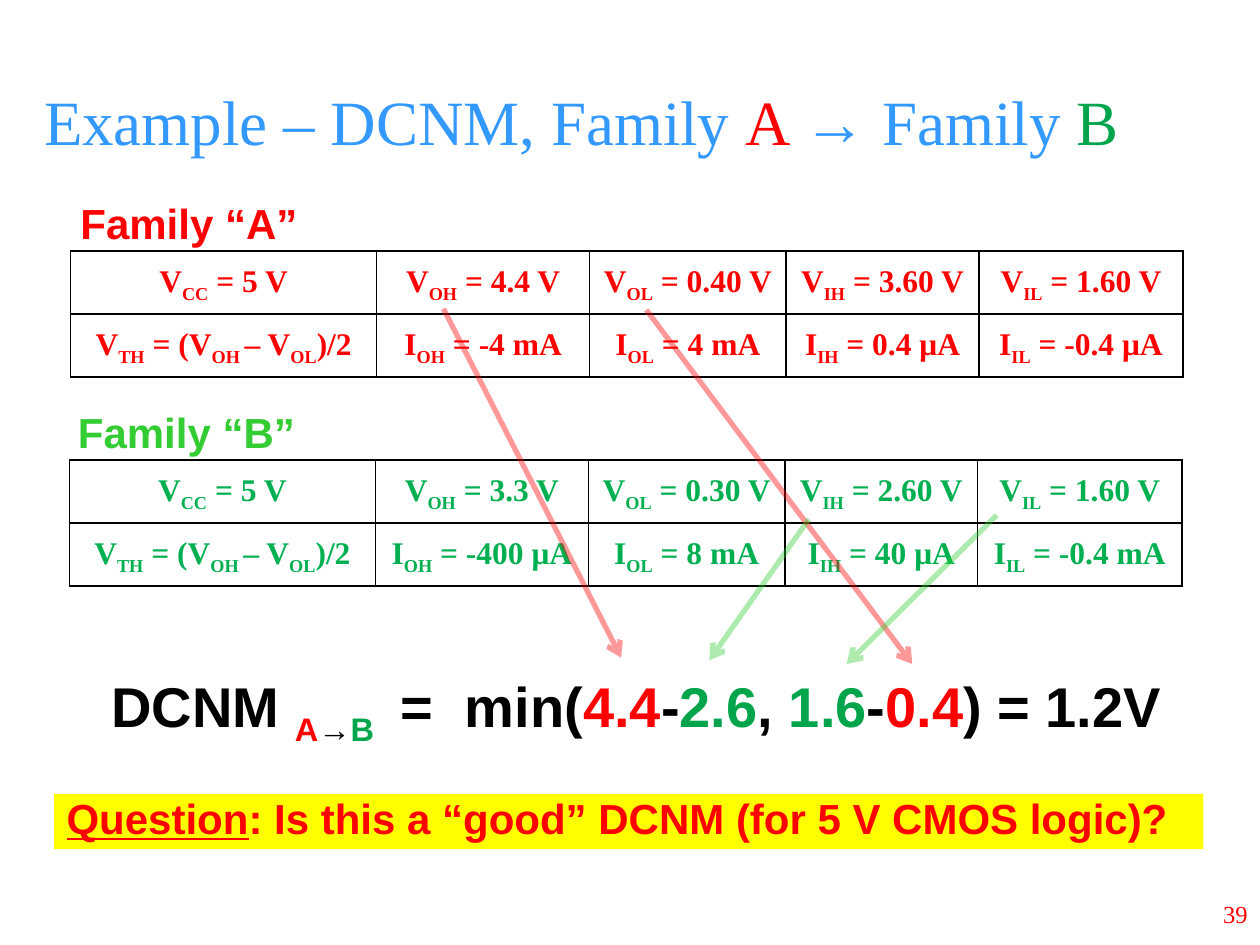
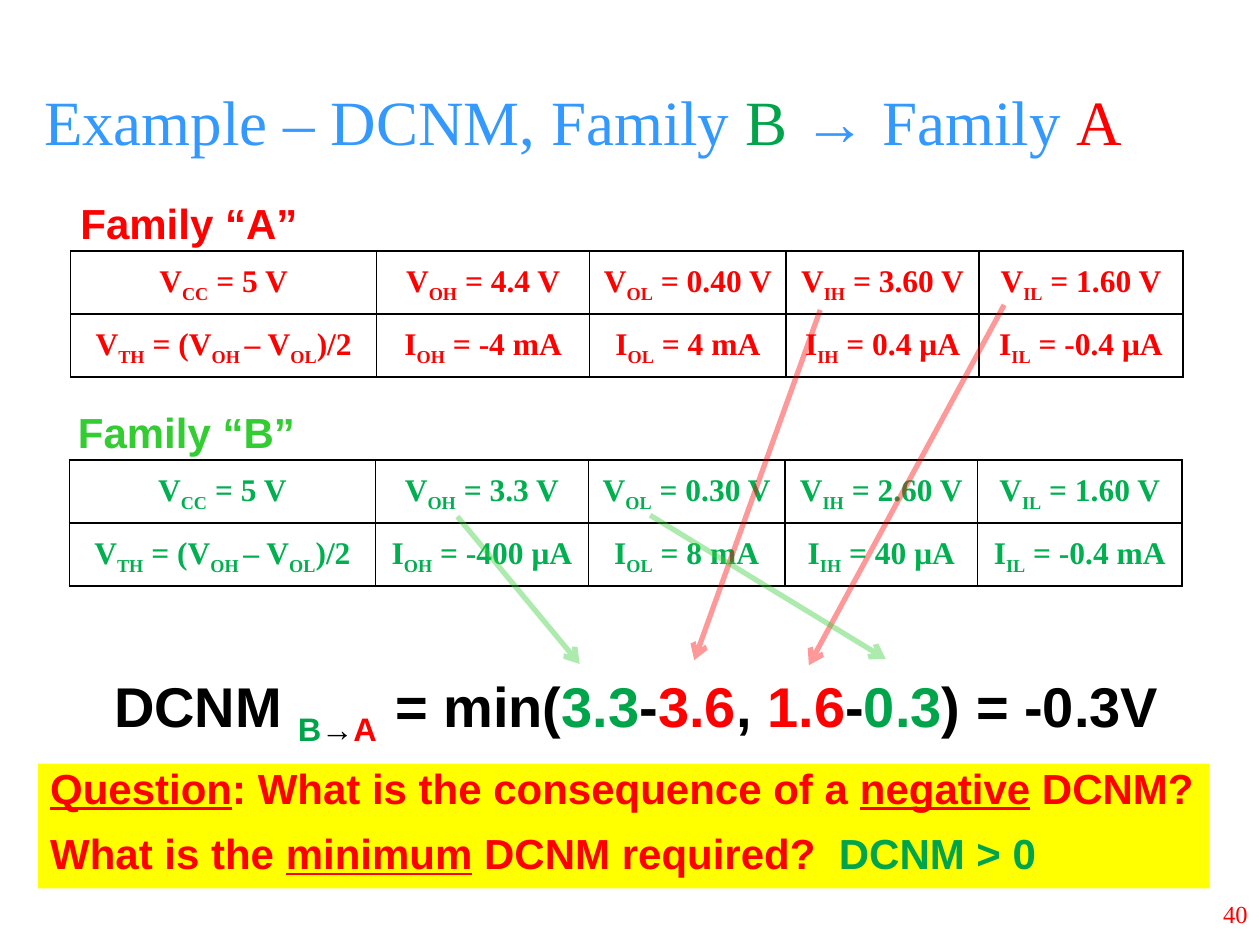
from lxml.etree import SubElement
from pptx import Presentation
from pptx.dml.color import RGBColor
from pptx.enum.shapes import MSO_CONNECTOR, MSO_SHAPE
from pptx.enum.text import MSO_ANCHOR, PP_ALIGN
from pptx.oxml.ns import qn
from pptx.util import Inches, Pt

COLOURS = {
    "title": "3399FF", "black": "000000", "red": "FF0000", "green": "00A44A",
    "table_green": "00B050", "bright_green": "33CC33", "yellow": "FFFF00",
}
FAMILY_COLOUR = {"A": "red", "B": "green"}
TITLE = {"name": "Times New Roman", "size": Pt(36)}
NUMBER = {"name": "Times New Roman", "size": Pt(14)}
CELL = {"name": "Times New Roman", "size": Pt(18), "bold": True}
LABEL = {"name": "Arial", "size": Pt(24), "bold": True}
FORMULA = {"name": "Arial", "size": Pt(32), "bold": True}
SUBSCRIPT = {"baseline": "-25000"}
UNDERLINE = {"underline": True}
TIGHT = {"line_spacing": 0.85}
CENTRED = {"alignment": PP_ALIGN.CENTER, **TIGHT}
CELL_PARA = {"space_before": Pt(4), "space_after": Pt(4), **CENTRED}
COLUMN_WIDTHS = [2.43, 1.69, 1.56, 1.53, 1.62]
ROW_HEIGHT = 0.5
THRESHOLD = "V~TH~ = (V~OH ~– V~OL~)/2"
FAMILIES = {
    "A": {
        "table": (0.56, 1.99), "label": (0.54, 1.58),
        "table_colour": "red", "accent": "red",
        "rows": [
            ["V~CC~ = 5 V", "V~OH~ = 4.4 V", "V~OL~ = 0.40 V", "V~IH~ = 3.60 V", "V~IL~ = 1.60 V"],
            [THRESHOLD, "I~OH~ = -4 mA", "I~OL~ = 4 mA", "I~IH~ = 0.4 μA", "I~IL~ = -0.4 μA"],
        ],
    },
    "B": {
        "table": (0.55, 3.65), "label": (0.52, 3.24),
        "table_colour": "table_green", "accent": "bright_green",
        "rows": [
            ["V~CC~ = 5 V", "V~OH~ = 3.3 V", "V~OL~ = 0.30 V", "V~IH~ = 2.60 V", "V~IL~ = 1.60 V"],
            [THRESHOLD, "I~OH~ = -400 μA", "I~OL~ = 8 mA", "I~IH~ = 40 μA", "I~IL~ = -0.4 mA"],
        ],
    },
}
EXAMPLES = [
    {
        "number": 39, "source": "A", "target": "B",
        "levels": ["4.4", "2.6", "1.6", "0.4"], "result": "1.2V",
        "gaps": ["650", "890"],
        "arrows": [
            ("A", (3.52, 2.45), (4.93, 5.22)), ("A", (5.13, 2.46), (7.24, 5.27)),
            ("B", (6.42, 4.12), (5.63, 5.24)), ("B", (7.91, 4.09), (6.72, 5.27)),
        ],
        "question_area": (0.43, 6.3, 9.12, 0.44),
        "question": [[
            ("Question", "red", UNDERLINE),
            (": Is this a “good” DCNM (for 5 V CMOS logic)?", "red"),
        ]],
    },
    {
        "number": 40, "source": "B", "target": "A",
        "levels": ["3.3", "3.6", "1.6", "0.3"], "result": "-0.3V",
        "gaps": ["150", "0"],
        "arrows": [
            ("A", (7.97, 2.42), (6.42, 5.28)), ("A", (6.51, 2.46), (5.51, 5.24)),
            ("B", (3.63, 4.1), (4.6, 5.27)), ("B", (5.16, 4.09), (7.03, 5.23)),
        ],
        "question_area": (0.3, 6.06, 9.3, 0.99),
        "question": [
            [
                ("Question", "red", UNDERLINE),
                (": What is the consequence of a ", "red"),
                ("negative", "red", UNDERLINE),
                (" DCNM?", "red"),
            ],
            [
                ("What is the ", "red"),
                ("minimum", "red", UNDERLINE),
                (" DCNM required?  ", "red"),
                ("DCNM > 0", "green"),
            ],
        ],
    },
]


def rgb(colour):
    """Return the named colour."""
    return RGBColor.from_string(COLOURS[colour])


def apply_format(target, values):
    """Set every attribute in a dict of format values."""
    for name, value in values.items():
        setattr(target, name, value)


def write(para, spans, font, layout):
    """Fill a paragraph with (text, colour, extra format) spans."""
    apply_format(para, layout)
    for text, colour, *extras in spans:
        span = para.add_run()
        span.text = text
        span.font.color.rgb = rgb(colour)
        values = dict(font)
        for extra in extras:
            values.update(extra)
        for name in ("baseline", "spc"):
            if name in values:
                span.font._element.set(name, values.pop(name))
        apply_format(span.font, values)


def add_text(page, area, spans, font, layout, frame_format=None):
    """Add a one-paragraph text box."""
    box = page.shapes.add_textbox(*map(Inches, area))
    apply_format(box.text_frame, {"word_wrap": True, **(frame_format or {})})
    write(box.text_frame.paragraphs[0], spans, font, layout)


def add_title(page, source, target):
    """Add the title that names both families."""
    spans = [
        ("Example – DCNM, Family ", "title"),
        (source + " ", FAMILY_COLOUR[source]),
        ("→ Family ", "title"),
        (target, FAMILY_COLOUR[target]),
    ]
    frame_format = {"vertical_anchor": MSO_ANCHOR.MIDDLE, "margin_left": Inches(0.35)}
    add_text(page, (0, 0.33, 10, 1.25), spans, TITLE, {}, frame_format)


def add_number(page, number):
    """Add the red page number."""
    add_text(page, (7.92, 7, 2.08, 0.5), [(str(number), "red")], NUMBER,
             {"alignment": PP_ALIGN.RIGHT}, {"vertical_anchor": MSO_ANCHOR.MIDDLE})


def border_cell(cell):
    """Draw a thin black line on all four sides of a cell."""
    properties = cell._tc.get_or_add_tcPr()
    for index, side in enumerate(("lnL", "lnR", "lnT", "lnB")):
        line = properties.makeelement(qn(f"a:{side}"), {"w": str(Pt(1))})
        fill = SubElement(line, qn("a:solidFill"))
        SubElement(fill, qn("a:srgbClr"), val=COLOURS["black"])
        properties.insert(index, line)


def add_family_table(page, family):
    """Add the table of a family's levels, with subscripts between tildes."""
    rows = family["rows"]
    area = (*family["table"], sum(COLUMN_WIDTHS), ROW_HEIGHT * len(rows))
    table = page.shapes.add_table(len(rows), len(COLUMN_WIDTHS), *map(Inches, area)).table
    apply_format(table, {"first_row": False, "horz_banding": False})
    for column, width in zip(table.columns, COLUMN_WIDTHS):
        column.width = Inches(width)
    cell_format = {
        "vertical_anchor": MSO_ANCHOR.MIDDLE, "margin_left": Inches(0.07),
        "margin_right": Inches(0.07), "margin_top": 0, "margin_bottom": 0,
    }
    for cell, text in zip(table.iter_cells(), sum(rows, [])):
        apply_format(cell, cell_format)
        cell.fill.background()
        border_cell(cell)
        spans = [(piece, family["table_colour"], SUBSCRIPT if index % 2 else {})
                 for index, piece in enumerate(text.split("~"))]
        write(cell.text_frame.paragraphs[0], spans, CELL, CELL_PARA)


def add_family_label(page, name, family):
    """Add the heading above a family's table."""
    add_text(page, (*family["label"], 2.84, 0.44),
             [(f"Family “{name}”", family["accent"])], LABEL, TIGHT)


def add_formula(page, example):
    """Add the noise margin formula, coloured by family."""
    source, target = example["source"], example["target"]
    source_colour, target_colour = FAMILY_COLOUR[source], FAMILY_COLOUR[target]
    high_out, high_in, low_in, low_out = example["levels"]
    before_equals, after_equals = ({"spc": gap} for gap in example["gaps"])
    spans = [
        ("DCNM ", "black"),
        (source, source_colour, SUBSCRIPT),
        ("→", "black", SUBSCRIPT),
        (target, target_colour, SUBSCRIPT),
        (" ", "black", before_equals),
        ("=", "black"),
        (" ", "black", after_equals),
        ("min(", "black"),
        (high_out, source_colour),
        ("-", "black"),
        (high_in, target_colour),
        (", ", "black"),
        (low_in, target_colour),
        ("-", "black"),
        (low_out, source_colour),
        (f") = {example['result']}", "black"),
    ]
    add_text(page, (0.73, 5.31, 8.64, 0.56), spans, FORMULA, CENTRED)


def add_arrow(page, start, end, colour):
    """Add a translucent arrow from a table level to the formula."""
    arrow = page.shapes.add_connector(MSO_CONNECTOR.STRAIGHT, *map(Inches, (*start, *end)))
    arrow.line.width = Pt(3)
    arrow.line.color.rgb = rgb(colour)
    line = arrow.line._get_or_add_ln()
    SubElement(line.find(f".//{qn('a:srgbClr')}"), qn("a:alpha"), val="40000")
    SubElement(line, qn("a:tailEnd"), type="arrow")
    SubElement(arrow._element.spPr, qn("a:effectLst"))


def add_question(page, area, lines):
    """Add the yellow question band."""
    band = page.shapes.add_shape(MSO_SHAPE.RECTANGLE, *map(Inches, area))
    band.shadow.inherit = False
    band.fill.solid()
    band.fill.fore_color.rgb = rgb("yellow")
    band.line.fill.background()
    frame = band.text_frame
    apply_format(frame, {"word_wrap": True, "vertical_anchor": MSO_ANCHOR.TOP})
    for index, spans in enumerate(lines):
        para = frame.add_paragraph() if index else frame.paragraphs[0]
        write(para, spans, LABEL, {
            "alignment": PP_ALIGN.LEFT, "space_before": Pt(13 if index else 0), **TIGHT})


def add_example(deck, example):
    """Add one noise margin example page."""
    page = deck.slides.add_slide(deck.slide_layouts[6])
    add_title(page, example["source"], example["target"])
    add_number(page, example["number"])
    for name, family in FAMILIES.items():
        add_family_table(page, family)
        add_family_label(page, name, family)
    add_formula(page, example)
    for name, start, end in example["arrows"]:
        add_arrow(page, start, end, FAMILIES[name]["accent"])
    add_question(page, example["question_area"], example["question"])


def main():
    """Build and save the deck."""
    deck = Presentation()
    apply_format(deck, {"slide_width": Inches(10), "slide_height": Inches(7.5)})
    for example in EXAMPLES:
        add_example(deck, example)
    deck.save("out.pptx")


if __name__ == "__main__":
    main()
